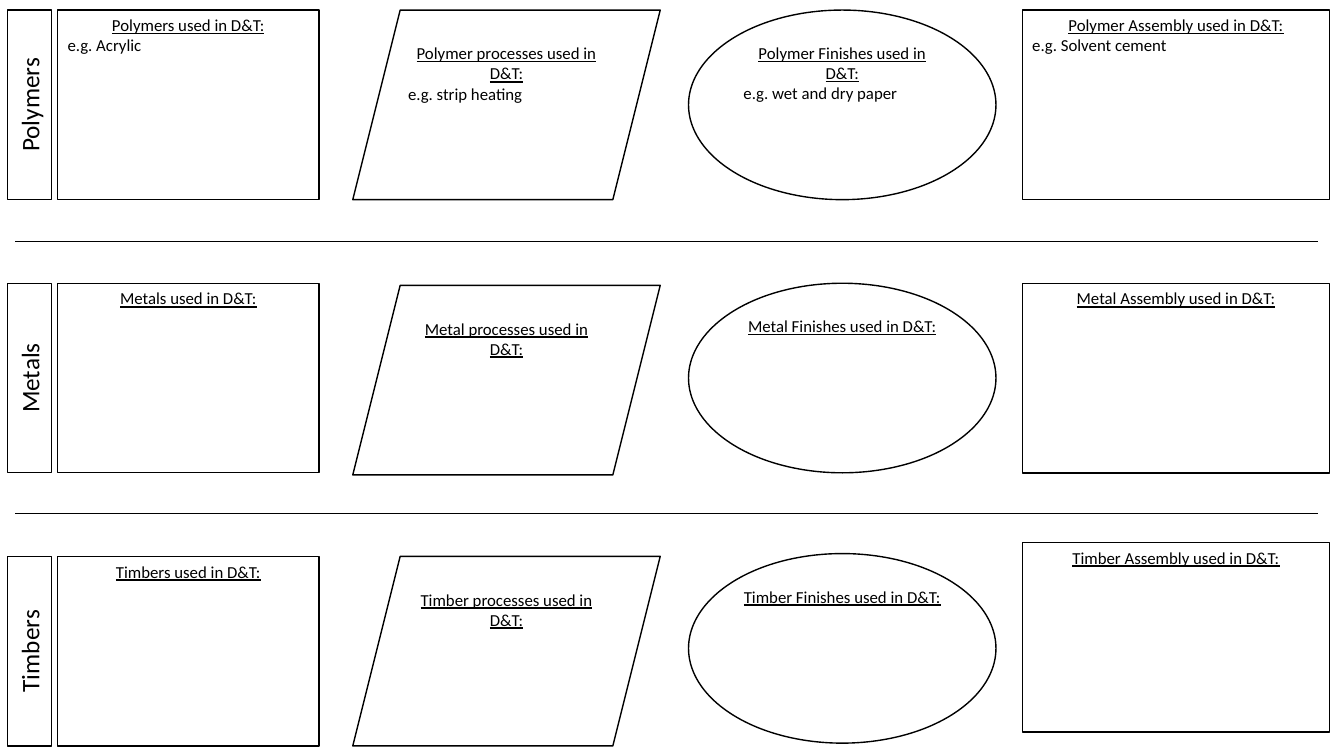
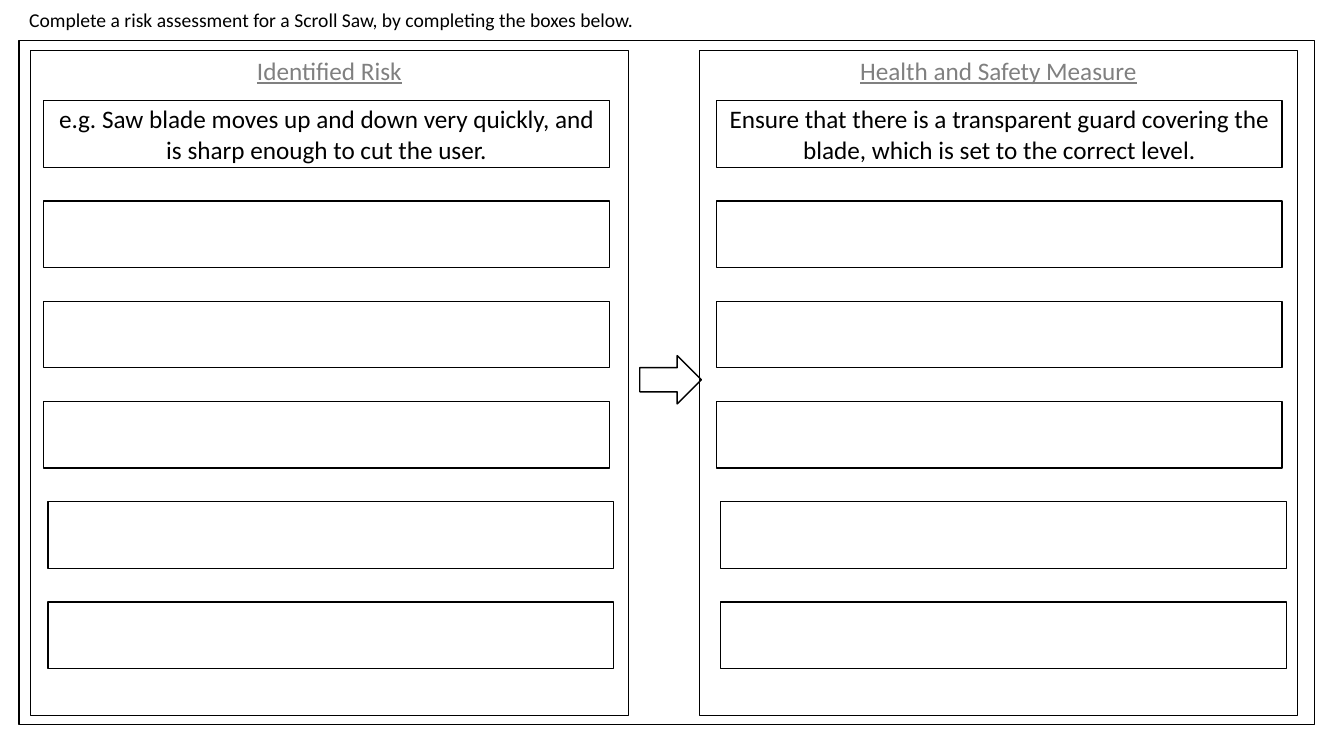
from dataclasses import dataclass
from typing import Optional

from lxml.etree import SubElement
from pptx import Presentation
from pptx.dml.color import RGBColor
from pptx.enum.shapes import MSO_CONNECTOR, MSO_SHAPE
from pptx.enum.text import MSO_ANCHOR, PP_ALIGN
from pptx.oxml.ns import qn
from pptx.shapes.autoshape import Shape
from pptx.slide import Slide
from pptx.text.text import _Paragraph as Paragraph
from pptx.util import Pt

BLACK = RGBColor(0x00, 0x00, 0x00)
GREY = RGBColor(0x80, 0x80, 0x80)
WHITE = RGBColor(0xFF, 0xFF, 0xFF)
FONT_NAME = "Calibri"
SLIDE_WIDTH, SLIDE_HEIGHT = 960, 540
BLANK_LAYOUT = 6

ROW_TOP, ROW_PITCH, ROW_HEIGHT = 7.2, 195.1, 135.4
LABEL_LEFT, LABEL_WIDTH = 5.2, 31.7
DIVIDER_LEFT, DIVIDER_RIGHT, DIVIDER_TOP, DIVIDER_PITCH = 10.8, 941.8, 172.1, 194.5

PANEL_TOP, PANEL_WIDTH, PANEL_HEIGHT = 36, 427, 475.2
ANSWER_COUNT, ANSWER_TOP, ANSWER_PITCH = 6, 72, 71.6
ANSWER_WIDTH, ANSWER_HEIGHT = 404, 47.5
LOWER_ANSWERS_START, LOWER_ANSWERS_SHIFT = 4, 2.9


@dataclass(frozen=True)
class Box:
    left: float
    top: float
    width: float
    height: float


@dataclass(frozen=True)
class TextStyle:
    size: float
    color: RGBColor = BLACK
    underline: bool = False
    alignment: PP_ALIGN = PP_ALIGN.CENTER


@dataclass(frozen=True)
class Material:
    singular: str
    plural: str
    shifts: tuple[float, float, float, float] = (0, 0, 0, 0)
    examples: tuple[str, ...] = ()


@dataclass(frozen=True)
class Topic:
    left: float
    width: float
    kind: MSO_SHAPE
    suffix: str


@dataclass(frozen=True)
class Panel:
    left: float
    answers_left: float
    heading: str
    example: str


HEADING = TextStyle(12, underline=True)
EXAMPLE = TextStyle(12, alignment=PP_ALIGN.LEFT)
LARGE = TextStyle(18)
PANEL_HEADING = TextStyle(18, GREY, underline=True)
INSTRUCTION = TextStyle(14, alignment=PP_ALIGN.LEFT)

MATERIALS = (
    Material("Polymer", "Polymers", examples=(
        "e.g. Acrylic",
        "e.g. strip heating",
        "e.g. wet and dry paper",
        "e.g. Solvent cement",
    )),
    Material("Metal", "Metals", shifts=(0, 1.5, 0, 0)),
    Material("Timber", "Timbers", shifts=(0, 0, -2, -10)),
)
TOPICS = (
    Topic(41.2, 186.6, MSO_SHAPE.RECTANGLE, "s"),
    Topic(252, 219.6, MSO_SHAPE.PARALLELOGRAM, " processes"),
    Topic(491.8, 219.6, MSO_SHAPE.OVAL, " Finishes"),
    Topic(730.2, 219.6, MSO_SHAPE.FLOWCHART_PROCESS, " Assembly"),
)
PANELS = (
    Panel(21.8, 31.3, "Identified Risk",
          "e.g. Saw blade moves up and down very quickly, and is sharp enough to cut the user."),
    Panel(499.7, 511.9, "Health and Safety Measure",
          "Ensure that there is a transparent guard covering the blade, "
          "which is set to the correct level."),
)


def format_paragraph(paragraph: Paragraph, style: TextStyle) -> None:
    paragraph.alignment = style.alignment
    for run in paragraph.runs:
        run.font.name = FONT_NAME
        run.font.size = Pt(style.size)
        run.font.underline = style.underline
        run.font.color.rgb = style.color


def set_text(shape: Shape, lines: list[tuple[str, TextStyle]],
             anchor: MSO_ANCHOR = MSO_ANCHOR.TOP) -> None:
    text_frame = shape.text_frame
    text_frame.text = "\n".join(text for text, _ in lines)
    text_frame.vertical_anchor = anchor
    for paragraph, (_, style) in zip(text_frame.paragraphs, lines):
        format_paragraph(paragraph, style)


def add_outline(slide: Slide, kind: MSO_SHAPE, box: Box,
                fill: Optional[RGBColor] = None) -> Shape:
    shape = slide.shapes.add_shape(
        kind, Pt(box.left), Pt(box.top), Pt(box.width), Pt(box.height))
    shape.shadow.inherit = False
    if fill is None:
        shape.fill.background()
    else:
        shape.fill.solid()
        shape.fill.fore_color.rgb = fill
    shape.line.color.rgb = BLACK
    shape.line.width = Pt(1)
    return shape


def add_divider(slide: Slide, top: float) -> None:
    connector = slide.shapes.add_connector(
        MSO_CONNECTOR.STRAIGHT,
        Pt(DIVIDER_LEFT), Pt(top), Pt(DIVIDER_RIGHT), Pt(top))
    connector.line.color.rgb = BLACK
    connector.line.width = Pt(0.5)
    SubElement(connector.element.spPr, qn("a:effectLst"))


def add_material_row(slide: Slide, material: Material, top: float) -> None:
    for index, topic in enumerate(TOPICS):
        box = Box(topic.left, top + material.shifts[index], topic.width, ROW_HEIGHT)
        lines = [(f"{material.singular}{topic.suffix} used in D&T:", HEADING)]
        if material.examples:
            lines.append((material.examples[index], EXAMPLE))
        set_text(add_outline(slide, topic.kind, box, WHITE), lines)
    label = add_outline(slide, MSO_SHAPE.RECTANGLE,
                        Box(LABEL_LEFT, top, LABEL_WIDTH, ROW_HEIGHT), WHITE)
    set_text(label, [(material.plural, LARGE)], MSO_ANCHOR.MIDDLE)
    label.element.txBody.find(qn("a:bodyPr")).set("vert", "vert270")


def build_materials_slide(slide: Slide) -> None:
    for row, material in enumerate(MATERIALS):
        add_material_row(slide, material, ROW_TOP + row * ROW_PITCH)
    for index in range(len(MATERIALS) - 1):
        add_divider(slide, DIVIDER_TOP + index * DIVIDER_PITCH)


def add_panel(slide: Slide, panel: Panel) -> None:
    frame = add_outline(slide, MSO_SHAPE.RECTANGLE,
                        Box(panel.left, PANEL_TOP, PANEL_WIDTH, PANEL_HEIGHT))
    set_text(frame, [(panel.heading, PANEL_HEADING)])
    for row in range(ANSWER_COUNT):
        shift = LOWER_ANSWERS_SHIFT if row >= LOWER_ANSWERS_START else 0
        answer = add_outline(slide, MSO_SHAPE.RECTANGLE, Box(
            panel.answers_left + shift, ANSWER_TOP + row * ANSWER_PITCH,
            ANSWER_WIDTH, ANSWER_HEIGHT))
        if row == 0:
            set_text(answer, [(panel.example, LARGE)], MSO_ANCHOR.MIDDLE)


def build_risk_slide(slide: Slide) -> None:
    add_outline(slide, MSO_SHAPE.RECTANGLE, Box(13.7, 28.8, 925.2, 488.9))
    instruction = slide.shapes.add_textbox(Pt(13.7), Pt(2.2), Pt(458), Pt(24.5))
    set_text(instruction, [(
        "Complete a risk assessment for a Scroll Saw, by completing the boxes below.",
        INSTRUCTION)])
    for panel in PANELS:
        add_panel(slide, panel)
    add_outline(slide, MSO_SHAPE.RIGHT_ARROW, Box(457, 254, 44, 34.5))


def main() -> None:
    presentation = Presentation()
    presentation.slide_width = Pt(SLIDE_WIDTH)
    presentation.slide_height = Pt(SLIDE_HEIGHT)
    layout = presentation.slide_layouts[BLANK_LAYOUT]
    for build_slide in (build_materials_slide, build_risk_slide):
        build_slide(presentation.slides.add_slide(layout))
    presentation.save("out.pptx")


if __name__ == "__main__":
    main()
